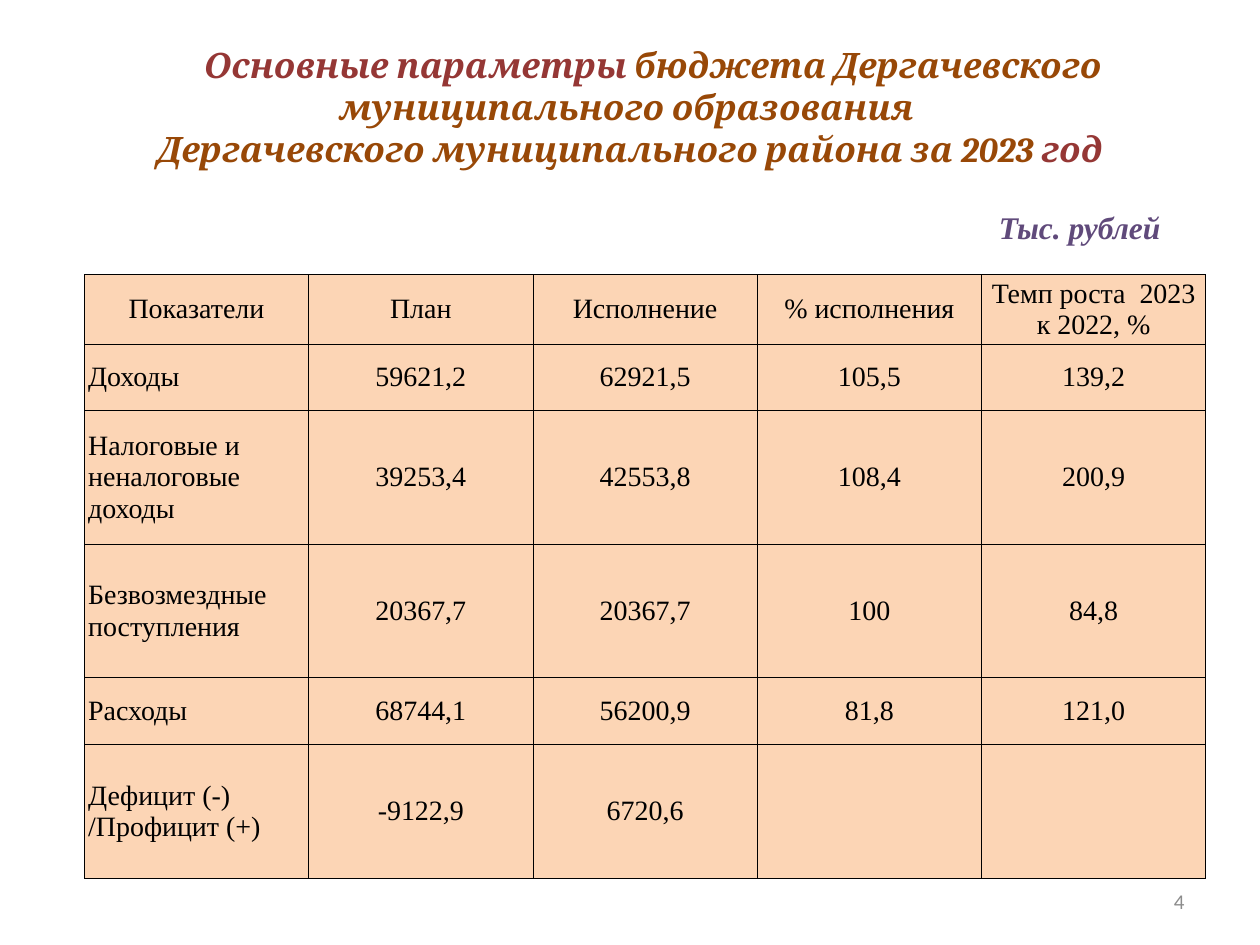
from lxml.etree import SubElement
from pptx import Presentation
from pptx.dml.color import RGBColor
from pptx.enum.text import MSO_ANCHOR, PP_ALIGN
from pptx.oxml.ns import qn
from pptx.util import Inches, Pt

COLORS = {"red": "953735", "brown": "984807", "purple": "604A7B",
          "gray": "8C8C8C", "black": "000000", "peach": "FCD5B5"}
TITLE = [
    [("Основные параметры ", "red"),
     ("бюджета Дергачевского муниципального образования ", "brown")],
    [("Дергачевского муниципального района за 2023 ", "brown"), ("год", "red")],
]
ROWS = [
    ("Показатели", "План", "Исполнение", "% исполнения", "Темп роста  2023 к 2022, %"),
    ("Доходы", "59621,2", "62921,5", "105,5", "139,2"),
    ("Налоговые и неналоговые доходы", "39253,4", "42553,8", "108,4", "200,9"),
    ("Безвозмездные поступления", "20367,7", "20367,7", "100", "84,8"),
    ("Расходы", "68744,1", "56200,9", "81,8", "121,0"),
    ("Дефицит (-) /Профицит (+)", "-9122,9", "6720,6", "", ""),
]
ROW_HEIGHTS = [0.55, 0.53, 1.06, 1.06, 0.53, 1.06]
COL_WIDTH = 1.78


def rgb(name):
    return RGBColor.from_string(COLORS[name])


def set_font(font, name, size, color, strong=False):
    font.name, font.size, font.color.rgb = name, Pt(size), rgb(color)
    font.bold = font.italic = strong


def add_title(s):
    sp = s.shapes.title
    sp.left, sp.top, sp.width, sp.height = map(Inches, (0.5, 0.3, 9, 1.09))
    tf = sp.text_frame
    tf.word_wrap, tf.vertical_anchor = True, MSO_ANCHOR.MIDDLE
    p = tf.paragraphs[0]
    p.alignment = PP_ALIGN.CENTER
    p._p.get_or_add_pPr().set("indent", str(Inches(0.36)))
    for i, line in enumerate(TITLE):
        if i:
            p.add_line_break()
        for text, color in line:
            r = p.add_run()
            r.text = text
            set_font(r.font, "Cambria", 20, color, True)


def add_label(s, box, text, font, wrap, spacing=None):
    tf = s.shapes.add_textbox(*map(Inches, box)).text_frame
    tf.word_wrap, tf.vertical_anchor = wrap, MSO_ANCHOR.MIDDLE
    p = tf.paragraphs[0]
    p.text, p.alignment, p.line_spacing = text, PP_ALIGN.RIGHT, spacing
    set_font(p.font, *font)


def set_borders(cell):
    tcPr = cell._tc.get_or_add_tcPr()
    for side in ("a:lnL", "a:lnR", "a:lnT", "a:lnB"):
        ln = SubElement(tcPr, qn(side), w=str(Pt(0.5)))
        fill = SubElement(ln, qn("a:solidFill"))
        SubElement(fill, qn("a:srgbClr"), val=COLORS["black"])


def add_budget_table(s):
    cols = len(ROWS[0])
    table = s.shapes.add_table(
        len(ROWS), cols, Inches(0.67), Inches(2.18),
        Inches(COL_WIDTH * cols), Inches(sum(ROW_HEIGHTS))).table
    for col in table.columns:
        col.width = Inches(COL_WIDTH)
    for i, (values, height) in enumerate(zip(ROWS, ROW_HEIGHTS)):
        table.rows[i].height = Inches(height)
        for j, value in enumerate(values):
            cell = table.cell(i, j)
            is_label = i > 0 and j == 0
            set_borders(cell)
            cell.fill.solid()
            cell.fill.fore_color.rgb = rgb("peach")
            cell.margin_left = Inches(0.03 if is_label else 0)
            cell.margin_right = cell.margin_top = cell.margin_bottom = 0
            cell.vertical_anchor = MSO_ANCHOR.MIDDLE
            p = cell.text_frame.paragraphs[0]
            p.text = value
            p.alignment = PP_ALIGN.LEFT if is_label else PP_ALIGN.CENTER
            set_font(p.font, "Times New Roman", 16, "black")


def main():
    """Build the slide with the main budget figures for 2023."""
    prs = Presentation()
    prs.slide_width, prs.slide_height = Inches(10), Inches(7.5)
    s = prs.slides.add_slide(prs.slide_layouts[5])
    add_title(s)
    add_label(s, (9.02, 6.95, 0.48, 0.4), "4", ("Calibri", 12, "gray"), True)
    add_label(s, (7.81, 1.55, 1.5, 0.45), "Тыс. рублей",
              ("Times New Roman", 18, "purple", True), False, 1.15)
    add_budget_table(s)
    prs.save("out.pptx")


if __name__ == "__main__":
    main()
